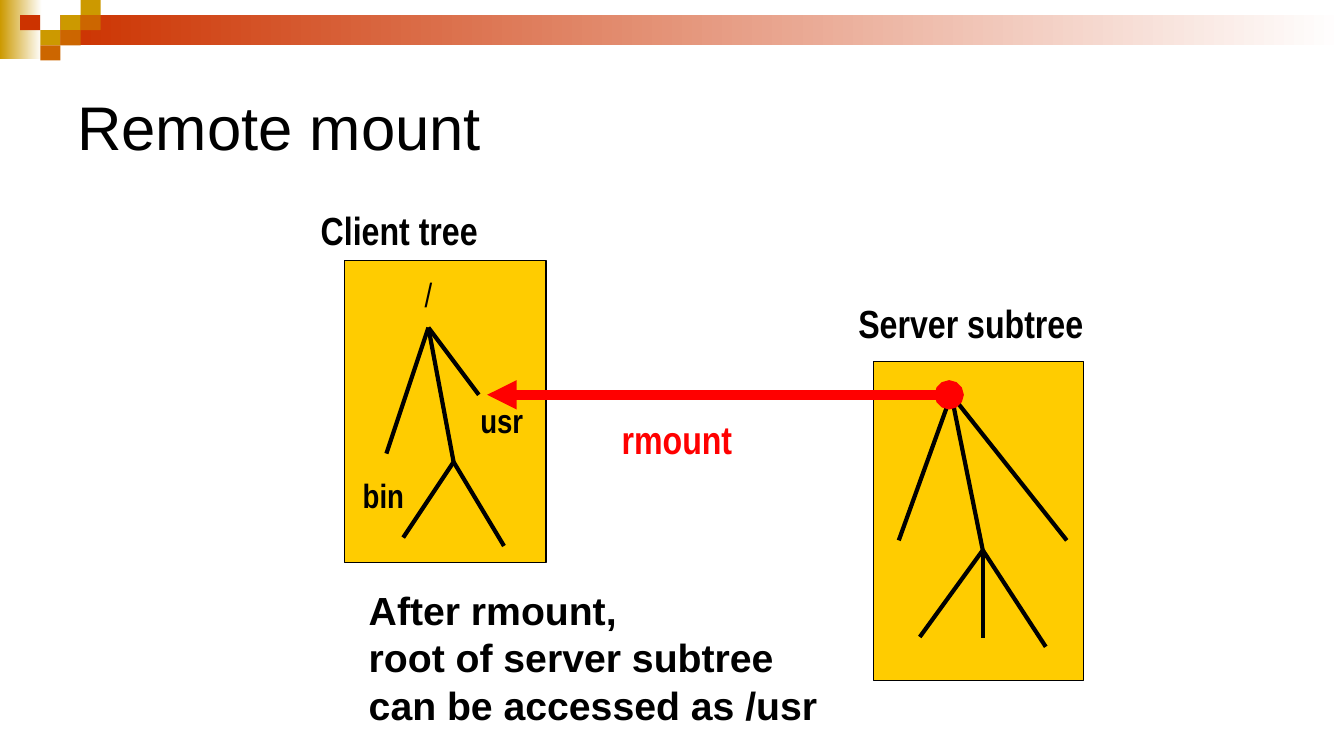
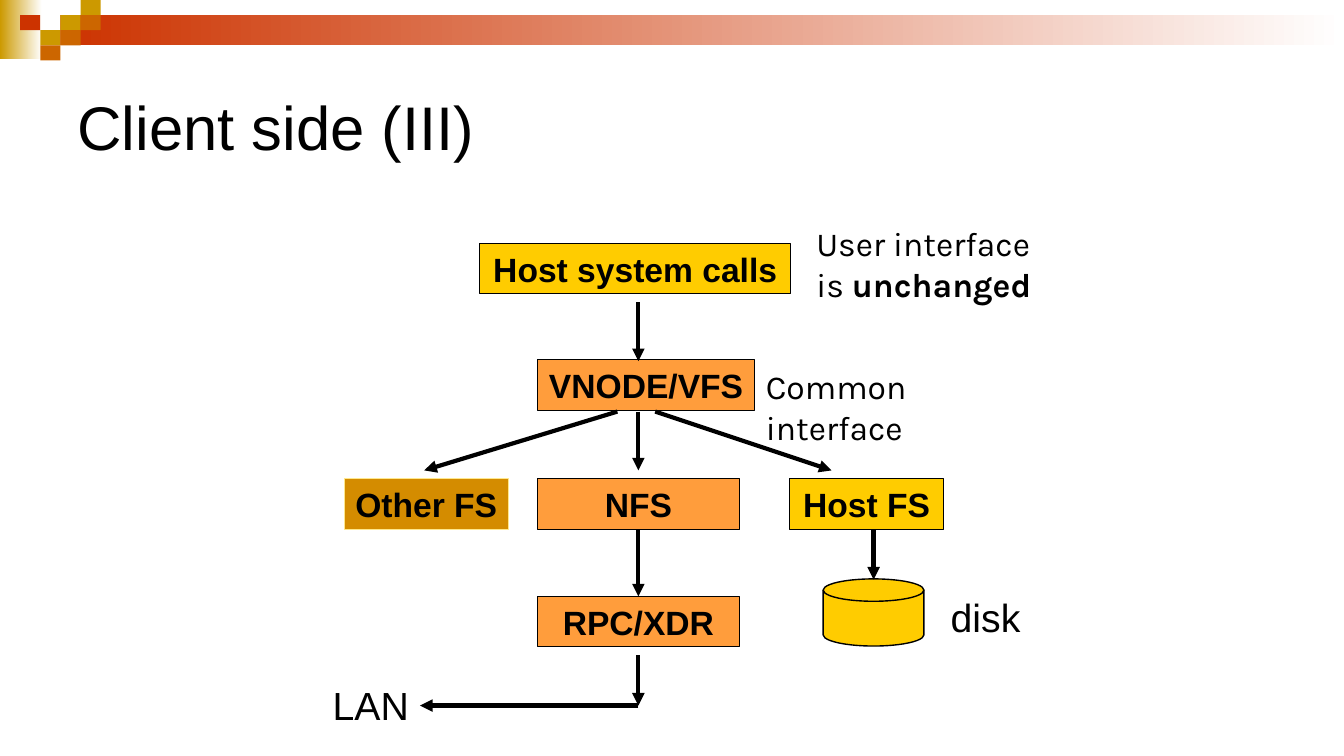
"""Build two slides on remote mounts and the client side of a network file system."""
from lxml import etree
from pptx import Presentation
from pptx.dml.color import RGBColor
from pptx.enum.shapes import MSO_CONNECTOR, MSO_SHAPE
from pptx.enum.text import MSO_ANCHOR, MSO_AUTO_SIZE, PP_ALIGN
from pptx.oxml.ns import qn
from pptx.util import Pt

RECT = MSO_SHAPE.RECTANGLE
DISK = MSO_SHAPE.FLOWCHART_MAGNETIC_DISK
LINE = MSO_CONNECTOR.STRAIGHT
LEFT, MID = PP_ALIGN.LEFT, PP_ALIGN.CENTER
TOP, HALF = MSO_ANCHOR.TOP, MSO_ANCHOR.MIDDLE
FIXED = MSO_AUTO_SIZE.NONE
GROW = MSO_AUTO_SIZE.SHAPE_TO_FIT_TEXT
WIDE, HIGH = 960, 540
COLS = {"black": "000000", "white": "FFFFFF", "red": "FF0000",
        "rust": "CC3300", "brown": "CC6600", "gold": "CC9900",
        "sun": "FFCC00", "peach": "FF9D3C", "ochre": "D48C00",
        "cream": "FFE88C"}


def rgb(name):
    return RGBColor.from_string(COLS[name])


def text(frame, *lines, size=24, face="Arial", tint="black", bold=False,
         align=LEFT, anchor=TOP, wrap=True, fit=FIXED):
    frame.word_wrap = wrap
    frame.auto_size = fit
    frame.vertical_anchor = anchor
    for i, line in enumerate(lines):
        para = frame.add_paragraph() if i else frame.paragraphs[0]
        para.alignment = align
        runs = [(line, bold)] if isinstance(line, str) else line
        for words, heavy in runs:
            run = para.add_run()
            run.text = words
            font = run.font
            font.size, font.name, font.bold = Pt(size), face, heavy
            font.color.rgb = rgb(tint)


def label(slide, box, *lines, **form):
    shape = slide.shapes.add_textbox(*map(Pt, box))
    text(shape.text_frame, *lines, fit=GROW, **form)


def block(slide, box, fill, edge=None, width=1, kind=RECT, fade=False):
    shape = slide.shapes.add_shape(kind, *map(Pt, box))
    shape.shadow.inherit = False
    if fade:
        shape.fill.gradient()
        shape.fill.gradient_angle = 0
        for stop, name in zip(shape.fill.gradient_stops, (fill, "white")):
            stop.color.rgb = rgb(name)
    else:
        shape.fill.solid()
        shape.fill.fore_color.rgb = rgb(fill)
    if edge:
        shape.line.color.rgb = rgb(edge)
        shape.line.width = Pt(width)
    else:
        shape.line.fill.background()
    return shape


def link(slide, start, end, tint="black", width=3, head=None, tail=None):
    wire = slide.shapes.add_connector(LINE, *map(Pt, (*start, *end)))
    wire.line.color.rgb = rgb(tint)
    wire.line.width = Pt(width)
    props = wire.element.spPr
    stroke = props.find(qn("a:ln"))
    for tag, kind in (("a:headEnd", head), ("a:tailEnd", tail)):
        if kind:
            etree.SubElement(stroke, qn(tag), type=kind)
    etree.SubElement(props, qn("a:effectLst"))
    return wire


def band(slide, layout):
    parts = [block(slide, (0, 0, 30, 42), "gold", fade=True),
             block(slide, (43.2, 10.8, WIDE - 43.2, 21.6), "rust", fade=True)]
    for col, row, fill in ((3, 1, "gold"), (4, 0, "gold"), (4, 1, "brown"),
                           (2, 2, "gold"), (1, 1, "rust"), (3, 2, "brown"),
                           (2, 3, "brown")):
        parts.append(block(slide, (col * 14.4, row * 10.8, 14.4, 10.8), fill))
    for part in parts:
        layout.shapes.element.append(part.element)


def setup(layout):
    for spot in list(layout.placeholders):
        if spot.placeholder_format.idx:
            layout.shapes.element.remove(spot.element)
        else:
            spot.left, spot.top = Pt(48), Pt(36)
            spot.width, spot.height = Pt(864), Pt(108)


def page(deck, layout, title):
    slide = deck.slides.add_slide(layout)
    text(slide.shapes.title.text_frame, title, size=44, anchor=HALF)
    return slide


def tree(slide, box, root, fork, tips, twigs):
    left, top = box[:2]
    block(slide, box, "sun", "black")
    for base, ends in ((root, [fork, *tips]), (fork, twigs)):
        for end in ends:
            link(slide, (left + base[0], top + base[1]),
                 (left + end[0], top + end[1]))


def mount(slide, x, y):
    thin = {"face": "Arial Narrow"}
    head = {"face": "Arial Narrow", "size": 28, "bold": True}
    left, top = x + 24, y + 42
    tree(slide, (x + 402, y + 114, 150, 228), (55.5, 24), (78, 135),
         [(18, 128), (138, 128)], [(33, 197), (78, 198), (123, 204)])
    tree(slide, (left, top, 144, 216), (60, 48), (78, 144),
         [(30, 138), (96, 96)], [(42, 198), (114, 204)])
    label(slide, (left + 6, top + 150, 54, 36), "bin", bold=True, **thin)
    label(slide, (left + 90, top + 96, 62, 36), "usr", bold=True, **thin)
    label(slide, (left + 48, top + 6, 24, 36), "/", align=MID, **thin)
    label(slide, (x, y, 180, 41), "Client tree", **head)
    label(slide, (x + 384, y + 66, 175, 41), "Server subtree",
          wrap=False, **head)
    link(slide, (x + 126, y + 138), (x + 456, y + 138), "red", 7,
         "triangle", "oval")
    label(slide, (x + 215, y + 149, 94, 41), "rmount", tint="red",
          wrap=False, **head)
    label(slide, (x + 34.3, y + 271.5, 347, 109), "After rmount,",
          "root of server subtree", "can be accessed as /usr",
          size=28, bold=True, wrap=False)


def flow(slide, x, y):
    nodes = {}
    for name, left, top, wide, fill, edge in (
            ("Host system calls", 114.7, 18, 222, "sun", "black"),
            ("VNODE/VFS", 156, 101, 155, "peach", "black"),
            ("Other FS", 18, 186, 117, "ochre", "cream"),
            ("NFS", 156, 186, 144, "peach", "black"),
            ("Host FS", 336, 186, 110, "sun", "black"),
            ("RPC/XDR", 156, 270, 144, "peach", "black")):
        node = block(slide, (x + left, y + top, wide, 36), fill, edge, 0.75)
        text(node.text_frame, name, bold=True, align=MID, anchor=HALF,
             wrap=False)
        nodes[name] = node
    block(slide, (x + 360, y + 257.5, 72, 48), "sun", "black", kind=DISK)

    for a, b, c, d in ((228, 60, 228, 102), (213, 138, 75, 180),
                       (228, 138, 228, 180), (240, 138, 366, 180),
                       (396, 222, 396, 258), (228, 312, 228, 348),
                       (228, 348, 72, 348)):
        link(slide, (x + a, y + b), (x + c, y + d), tail="triangle")
    wire = link(slide, (x + 228, y + 222), (x + 228, y + 270),
                tail="triangle")
    wire.begin_connect(nodes["NFS"], 2)
    wire.end_connect(nodes["RPC/XDR"], 0)

    label(slide, (x + 348, y, 174, 66),
          [("User interface is ", False), ("unchanged", True)], face="Karla")
    label(slide, (x + 312, y + 102, 208, 36), "Common interface",
          face="Karla")
    label(slide, (x + 444, y + 264, 65, 41), "disk", size=28, wrap=False)
    label(slide, (x + 2.5, y + 327, 70, 41), "LAN", size=28, wrap=False)


def main():
    deck = Presentation()
    deck.slide_width, deck.slide_height = Pt(WIDE), Pt(HIGH)
    layout = deck.slide_layouts[5]
    setup(layout)
    first = page(deck, layout, "Remote mount")
    band(first, layout)
    mount(first, 222, 144)
    flow(page(deck, layout, "Client side (III)"), 228, 156)
    deck.save("out.pptx")


if __name__ == "__main__":
    main()
